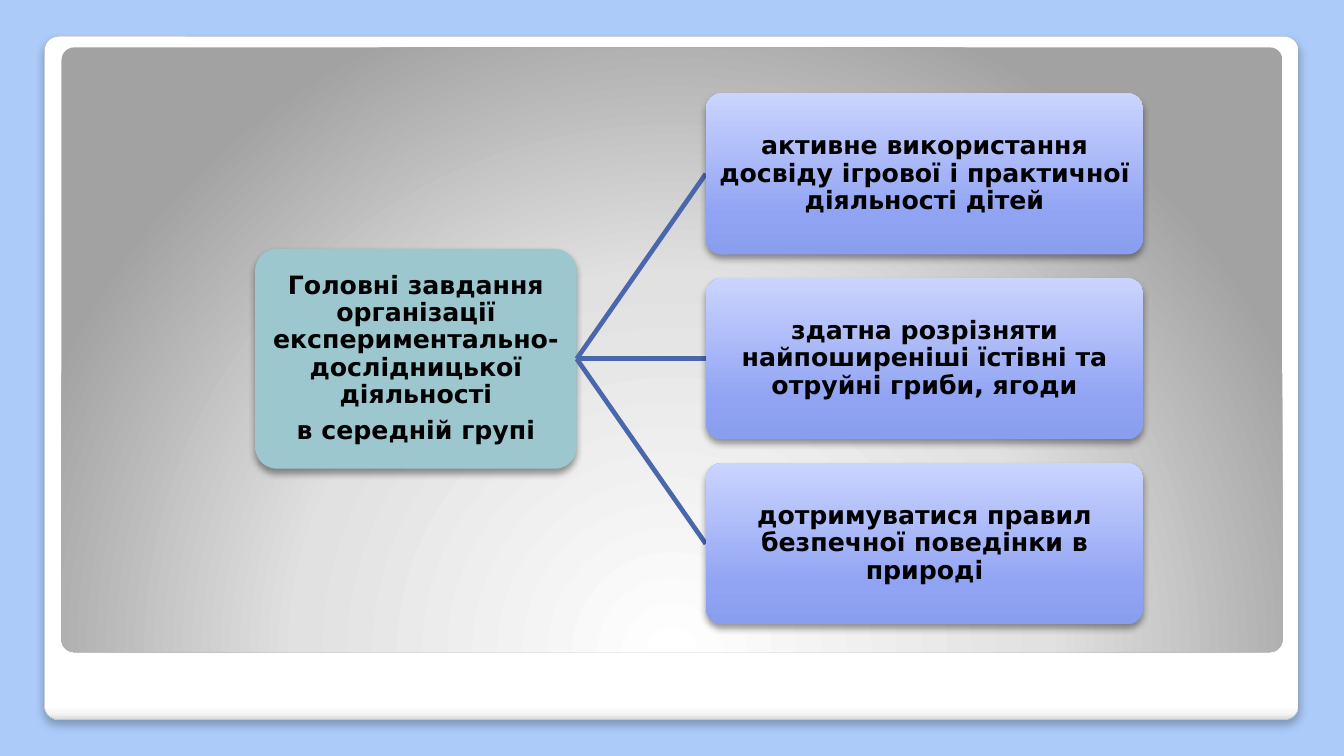
from pptx import Presentation
from pptx.dml.color import RGBColor
from pptx.enum import shapes, text
from pptx.oxml import parse_xml
from pptx.oxml.ns import nsdecls, qn
from pptx.util import Inches, Pt

ROOT_PARAGRAPHS = [
    "Головні завдання організації експериментально-дослідницької діяльності",
    "в середній групі",
]
TASKS = [
    "активне використання досвіду ігрової і практичної діяльності дітей",
    "здатна розрізняти найпоширеніші їстівні та отруйні гриби, ягоди",
    "дотримуватися правил безпечної поведінки в природі",
]

FONT = "DejaVu Sans"
BACKGROUND = RGBColor(0xAC, 0xCB, 0xF9)
FRAME_LINE = RGBColor(0xA4, 0xA4, 0xA4)
ROOT_FILL = RGBColor(0x9C, 0xC7, 0xCE)
BRANCH = RGBColor(0x4A, 0x66, 0xAC)
TEXT = RGBColor(0, 0, 0)
WHITE = RGBColor(0xFF, 0xFF, 0xFF)
FRAME_STOPS = [(0, WHITE), (98, WHITE), (99, RGBColor(0xF7, 0xF7, 0xF7)),
               (100, RGBColor(0xDA, 0xDA, 0xDA))]
PANEL_STOPS = [(0, WHITE), (55, RGBColor(0xE1, 0xE1, 0xE1)),
               (100, RGBColor(0xA2, 0xA2, 0xA2))]
TASK_STOPS = [(0, RGBColor(0x89, 0x9E, 0xEE)), (25, RGBColor(0x91, 0xA4, 0xF3)),
              (100, RGBColor(0xCB, 0xD4, 0xFE))]

DOWNWARD = '<a:lin ang="5400000" scaled="0"/>'
UPWARD = '<a:lin ang="16200000" scaled="0"/>'
FROM_BELOW = ('<a:path path="circle"><a:fillToRect l="50000" t="175000" '
              'r="50000" b="-75000"/></a:path>')

# Left, top, width, height in inches
FRAME = (0.44, 0.36, 12.44, 6.78)
PANEL = (0.61, 0.47, 12.11, 6)
ROOT = (2.53, 2.47, 3.19, 2.18)
TASK_LEFT, TASK_WIDTH, TASK_HEIGHT, TASK_PITCH = 7, 4.34, 1.6, 1.835


def add_rounded(slide, box, rounding):
    shape = slide.shapes.add_shape(shapes.MSO_SHAPE.ROUNDED_RECTANGLE,
                                   *(Inches(length) for length in box))
    shape.adjustments[0] = rounding
    shape.shadow.inherit = False
    shape.line.fill.background()
    return shape


def fill_gradient(shape, stops, direction):
    shape.fill.background()
    properties = shape._element.spPr
    stop_xml = "".join(
        f'<a:gs pos="{position * 1000}"><a:srgbClr val="{color}"/></a:gs>'
        for position, color in stops)
    gradient = parse_xml(f'<a:gradFill {nsdecls("a")} rotWithShape="1">'
                         f'<a:gsLst>{stop_xml}</a:gsLst>{direction}</a:gradFill>')
    properties.replace(properties.find(qn("a:noFill")), gradient)


def drop_shadow(shape, opacity, blur, distance):
    effects = shape._element.spPr.find(qn("a:effectLst"))
    effects.append(parse_xml(
        f'<a:outerShdw {nsdecls("a")} blurRad="{Pt(blur)}" dist="{Pt(distance)}" '
        f'dir="5400000" rotWithShape="0"><a:srgbClr val="000000">'
        f'<a:alpha val="{opacity * 1000}"/></a:srgbClr></a:outerShdw>'))


def add_node(slide, box, paragraphs):
    """Add a diagram box with bold centred text; its fill is set by the caller."""
    shape = add_rounded(slide, box, 0.1)
    drop_shadow(shape, 40, 5.2, 3)
    frame = shape.text_frame
    frame.word_wrap = True
    frame.vertical_anchor = text.MSO_ANCHOR.MIDDLE
    frame.margin_left = frame.margin_right = Inches(0.01)
    frame.margin_top = frame.margin_bottom = Inches(0.01)
    for index, words in enumerate(paragraphs):
        paragraph = frame.add_paragraph() if index else frame.paragraphs[0]
        paragraph.alignment = text.PP_ALIGN.CENTER
        paragraph.line_spacing = 0.9
        paragraph.space_after = Pt(6.3)
        run = paragraph.add_run()
        run.text = words
        run.font.name = FONT
        run.font.size = Pt(18)
        run.font.bold = True
        run.font.color.rgb = TEXT
    return shape


def add_branch(slide, start, end):
    connector = slide.shapes.add_connector(
        shapes.MSO_CONNECTOR.STRAIGHT, *(Inches(length) for length in start + end))
    connector.line.color.rgb = BRANCH
    connector.line.width = Pt(3.35)
    connector._element.spPr.append(parse_xml(f'<a:effectLst {nsdecls("a")}/>'))


def main():
    presentation = Presentation()
    presentation.slide_width = Inches(13.33)
    presentation.slide_height = Inches(7.5)
    slide = presentation.slides.add_slide(presentation.slide_layouts[6])
    slide.background.fill.solid()
    slide.background.fill.fore_color.rgb = BACKGROUND

    frame = add_rounded(slide, FRAME, 0.021)
    fill_gradient(frame, FRAME_STOPS, DOWNWARD)
    frame.line.color.rgb = FRAME_LINE
    frame.line.width = Pt(0.16)
    drop_shadow(frame, 25, 6, 4)
    panel = add_rounded(slide, PANEL, 0.021)
    fill_gradient(panel, PANEL_STOPS, FROM_BELOW)

    root = add_node(slide, ROOT, ROOT_PARAGRAPHS)
    root.fill.solid()
    root.fill.fore_color.rgb = ROOT_FILL

    left, top, width, height = ROOT
    root_end = (left + width, top + height / 2)
    for index, task in enumerate(TASKS):
        middle = root_end[1] + (index - (len(TASKS) - 1) / 2) * TASK_PITCH
        add_branch(slide, root_end, (TASK_LEFT, middle))
        box = (TASK_LEFT, middle - TASK_HEIGHT / 2, TASK_WIDTH, TASK_HEIGHT)
        fill_gradient(add_node(slide, box, [task]), TASK_STOPS, UPWARD)

    presentation.save("out.pptx")


if __name__ == "__main__":
    main()
